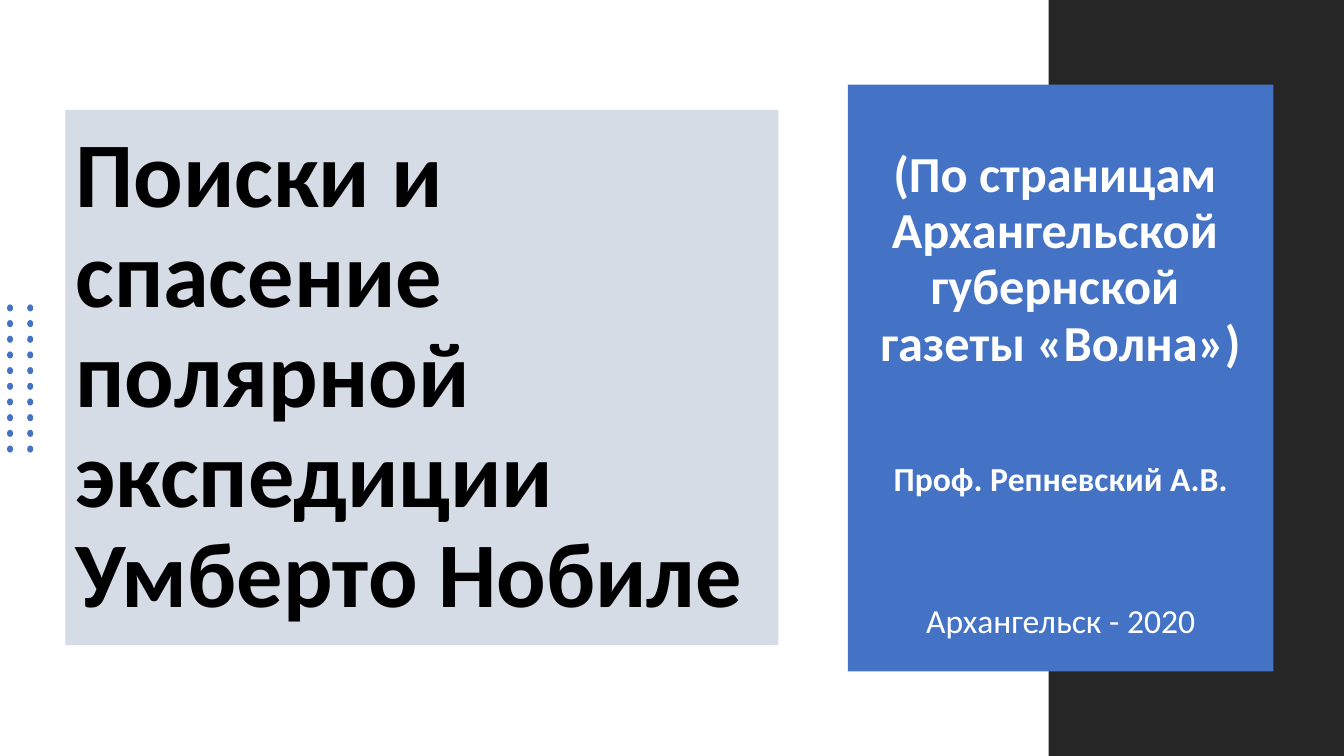
from pptx import Presentation
from pptx.dml.color import RGBColor
from pptx.enum import shapes, text
from pptx.util import Inches, Pt

WHITE, BLACK, DARK, BLUE, PALE = "FFFFFF", "000000", "262626", "4472C4", "D6DCE5"
RECTANGLE, OVAL = shapes.MSO_SHAPE.RECTANGLE, shapes.MSO_SHAPE.OVAL

TITLE = "Поиски и спасение полярной экспедиции Умберто Нобиле"
# Wording, size, bold, space before (points)
SUBTITLE = [
    ("(По страницам ", 36, True, 0),
    ("Архангельской ", 36, True, 10),
    ("губернской ", 36, True, 10),
    ("газеты «Волна»)", 36, True, 10),
    ("Проф. Репневский А.В.", 24, True, 71),
    ("Архангельск - 2020", 24, False, 81),
]


def colour(value):
    return RGBColor.from_string(value)


def add_filled(page, kind, box, fill):
    shape = page.shapes.add_shape(kind, *(Inches(length) for length in box))
    shape.shadow.inherit = False
    shape.fill.solid()
    shape.fill.fore_color.rgb = colour(fill)
    shape.line.fill.background()
    return shape


def format_frame(frame, **values):
    for name, value in {"word_wrap": True, **values}.items():
        setattr(frame, name, value)


def write(para, wording, font, **layout):
    for name, value in layout.items():
        setattr(para, name, value)
    span = para.add_run()
    span.text = wording
    span.font.color.rgb = colour(font.pop("color"))
    for name, value in {"name": "Calibri", **font}.items():
        setattr(span.font, name, value)


def add_title(page, box):
    frame = add_filled(page, RECTANGLE, box, PALE).text_frame
    format_frame(frame, vertical_anchor=text.MSO_ANCHOR.MIDDLE)
    write(frame.paragraphs[0], TITLE,
          {"size": Pt(66), "bold": True, "color": BLACK},
          alignment=text.PP_ALIGN.LEFT, line_spacing=0.9)


def add_subtitle(page, box):
    frame = add_filled(page, RECTANGLE, box, BLUE).text_frame
    format_frame(frame, vertical_anchor=text.MSO_ANCHOR.TOP, margin_top=Inches(0.73))
    for index, (wording, size, bold, gap) in enumerate(SUBTITLE):
        para = frame.add_paragraph() if index else frame.paragraphs[0]
        write(para, wording, {"size": Pt(size), "bold": bold, "color": WHITE},
              alignment=text.PP_ALIGN.CENTER, line_spacing=0.7, space_before=Pt(gap))


def add_dots(page, box, columns=2, rows=10):
    left, top, width, height = box
    dot_width, dot_height = 0.06, 0.07
    column_step = (width - dot_width) / (columns - 1)
    row_step = (height - dot_height) / (rows - 1)
    for row in range(rows):
        for column in range(columns):
            place = (left + column * column_step, top + row * row_step)
            add_filled(page, OVAL, (*place, dot_width, dot_height), BLUE)


def main():
    deck = Presentation()
    deck.slide_width, deck.slide_height = Inches(13.33), Inches(7.5)
    page = deck.slides.add_slide(deck.slide_layouts[6])

    # Title panel
    add_title(page, (0.65, 1.09, 7.07, 5.31))
    # Dark band on the right edge
    add_filled(page, RECTANGLE, (10.4, 0, 2.93, 7.5), DARK)
    # Subtitle panel
    add_subtitle(page, (8.41, 0.84, 4.22, 5.82))
    # Dot grid on the left edge
    add_dots(page, (0.07, 3.02, 0.26, 1.47))

    deck.save("out.pptx")


if __name__ == "__main__":
    main()
